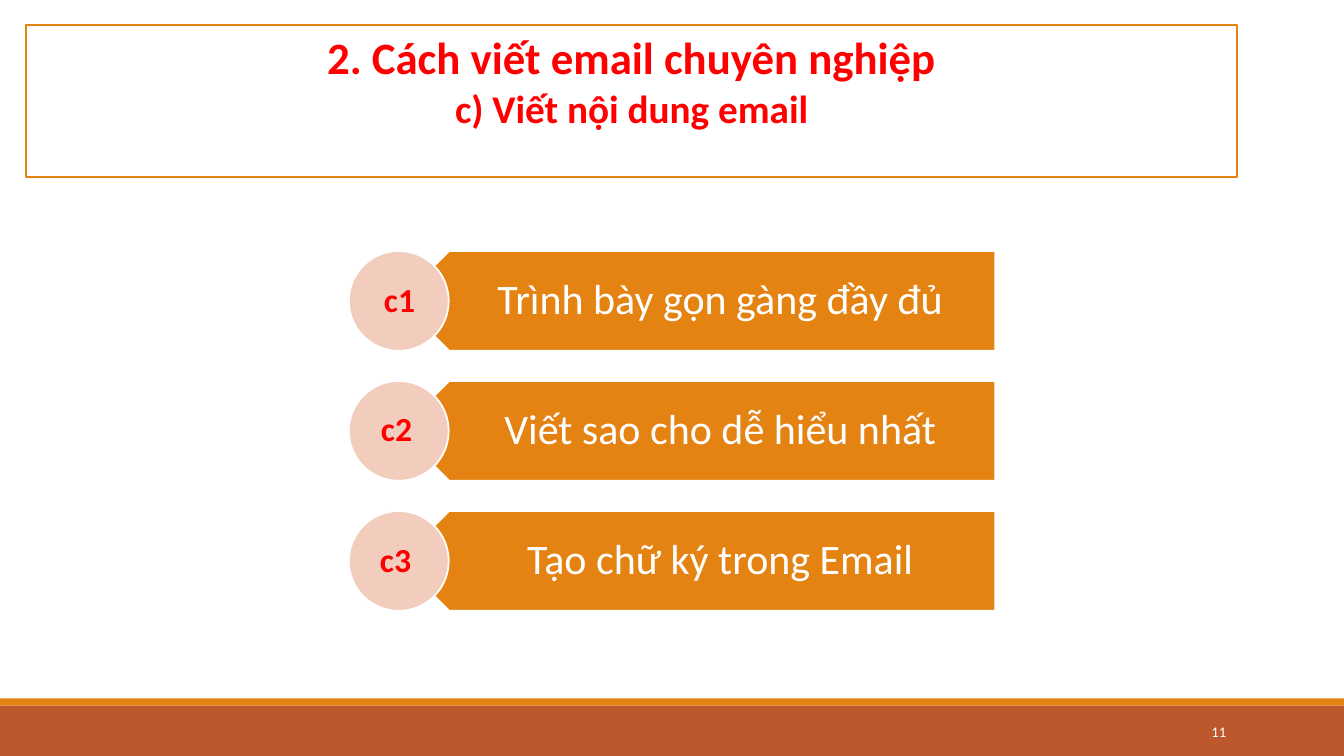
from dataclasses import dataclass
from typing import Optional

from pptx import Presentation
from pptx.dml.color import RGBColor
from pptx.enum.shapes import MSO_SHAPE as Shape
from pptx.enum.text import MSO_ANCHOR as Anchor, PP_ALIGN as Align
from pptx.util import Pt

EMU_PER_PX = 9144  # 100 px to the inch
SLIDE_WIDTH, SLIDE_HEIGHT = 1333, 750
FONT = "Calibri"

ORANGE = RGBColor(0xE4, 0x83, 0x12)
RUST = RGBColor(0xBD, 0x58, 0x2C)
PEACH = RGBColor(0xF2, 0xCD, 0xBD)
RED = RGBColor(0xFF, 0x00, 0x00)
WHITE = RGBColor(0xFF, 0xFF, 0xFF)

FIRST_ROW_TOP, ROW_PITCH, ROW_HEIGHT = 249, 129, 99


@dataclass(frozen=True)
class Box:
    left: int
    top: int
    width: int
    height: int

    def emu(self) -> list[int]:
        return [px * EMU_PER_PX for px in (self.left, self.top, self.width, self.height)]


@dataclass(frozen=True)
class Line:
    text: str
    size: float
    color: RGBColor
    bold: bool = False


@dataclass(frozen=True)
class Step:
    badge: str
    caption: str
    badge_left: int
    badge_offset: int


STEPS = [
    Step("c1", "Trình bày gọn gàng đầy đủ", 371, 23),
    Step("c2", "Viết sao cho dễ hiểu nhất", 368, 22),
    Step("c3", "Tạo chữ ký trong Email", 367, 23),
]


def add_block(slide, kind: Shape, box: Box, fill: RGBColor,
              outline: Optional[RGBColor] = None):
    shape = slide.shapes.add_shape(kind, *box.emu())
    shape.shadow.inherit = False
    shape.fill.solid()
    shape.fill.fore_color.rgb = fill
    if outline is None:
        shape.line.fill.background()
    else:
        shape.line.color.rgb = outline
        shape.line.width = Pt(1.25)
    return shape


def write_lines(shape, lines: list[Line], align: Align, anchor: Anchor = Anchor.TOP):
    frame = shape.text_frame
    frame.word_wrap = True
    frame.vertical_anchor = anchor
    frame.text = "\n".join(line.text for line in lines)
    for paragraph, line in zip(frame.paragraphs, lines):
        paragraph.alignment = align
        font = paragraph.runs[0].font
        font.name, font.size, font.bold = FONT, Pt(line.size), line.bold
        font.color.rgb = line.color
    return frame


def add_text(slide, box: Box, line: Line, align: Align, anchor: Anchor = Anchor.TOP):
    return write_lines(slide.shapes.add_textbox(*box.emu()), [line], align, anchor)


def add_step(slide, step: Step, top: int) -> None:
    arrow = add_block(slide, Shape.PENTAGON, Box(396, top, 591, ROW_HEIGHT), ORANGE, WHITE)
    arrow.rotation = 180
    frame = add_text(slide, Box(421, top, 566, ROW_HEIGHT),
                     Line(step.caption, 30, WHITE), Align.CENTER, Anchor.MIDDLE)
    frame.margin_left, frame.margin_right = 44 * EMU_PER_PX, 23 * EMU_PER_PX
    frame.margin_top = frame.margin_bottom = 12 * EMU_PER_PX
    frame.paragraphs[0].line_spacing = 0.9
    add_block(slide, Shape.OVAL, Box(346, top, ROW_HEIGHT, ROW_HEIGHT), PEACH, WHITE)
    add_text(slide, Box(step.badge_left, top + step.badge_offset, 81, 50),
             Line(step.badge, 24, RED, True), Align.LEFT)


def main() -> None:
    presentation = Presentation()
    presentation.slide_width = SLIDE_WIDTH * EMU_PER_PX
    presentation.slide_height = SLIDE_HEIGHT * EMU_PER_PX
    slide = presentation.slides.add_slide(presentation.slide_layouts[6])

    # Footer bands
    add_block(slide, Shape.RECTANGLE, Box(0, 700, SLIDE_WIDTH, 50), RUST)
    add_block(slide, Shape.RECTANGLE, Box(0, 693, SLIDE_WIDTH, 7), ORANGE)

    # Framed title
    title = add_block(slide, Shape.RECTANGLE, Box(26, 25, 1201, 151), WHITE, ORANGE)
    write_lines(title, [
        Line("2. Cách viết email chuyên nghiệp", 32, RED, True),
        Line("c) Viết nội dung email", 28, RED, True),
    ], Align.CENTER)

    # Numbered steps
    for index, step in enumerate(STEPS):
        add_step(slide, step, FIRST_ROW_TOP + index * ROW_PITCH)

    # Slide number
    add_text(slide, Box(1083, 706, 143, 40), Line("11", 10.5, WHITE),
             Align.RIGHT, Anchor.MIDDLE)

    presentation.save("out.pptx")


if __name__ == "__main__":
    main()
